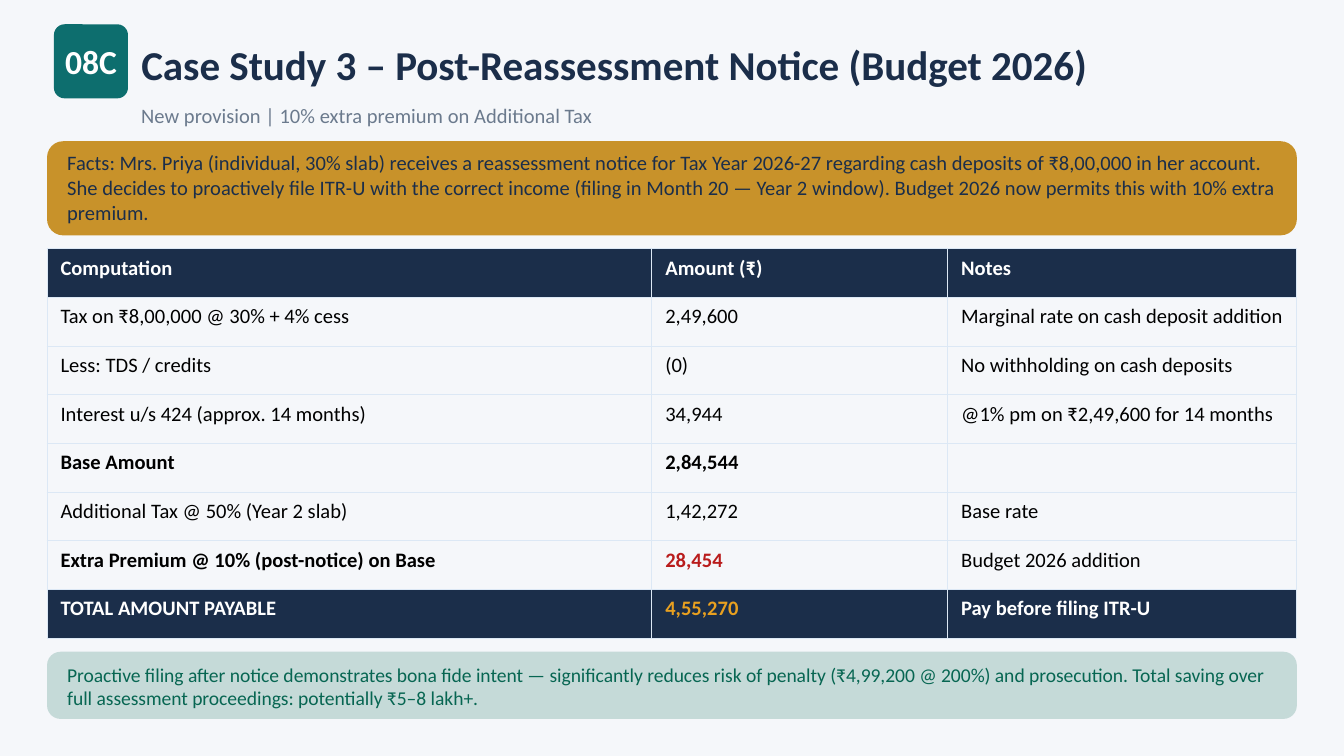
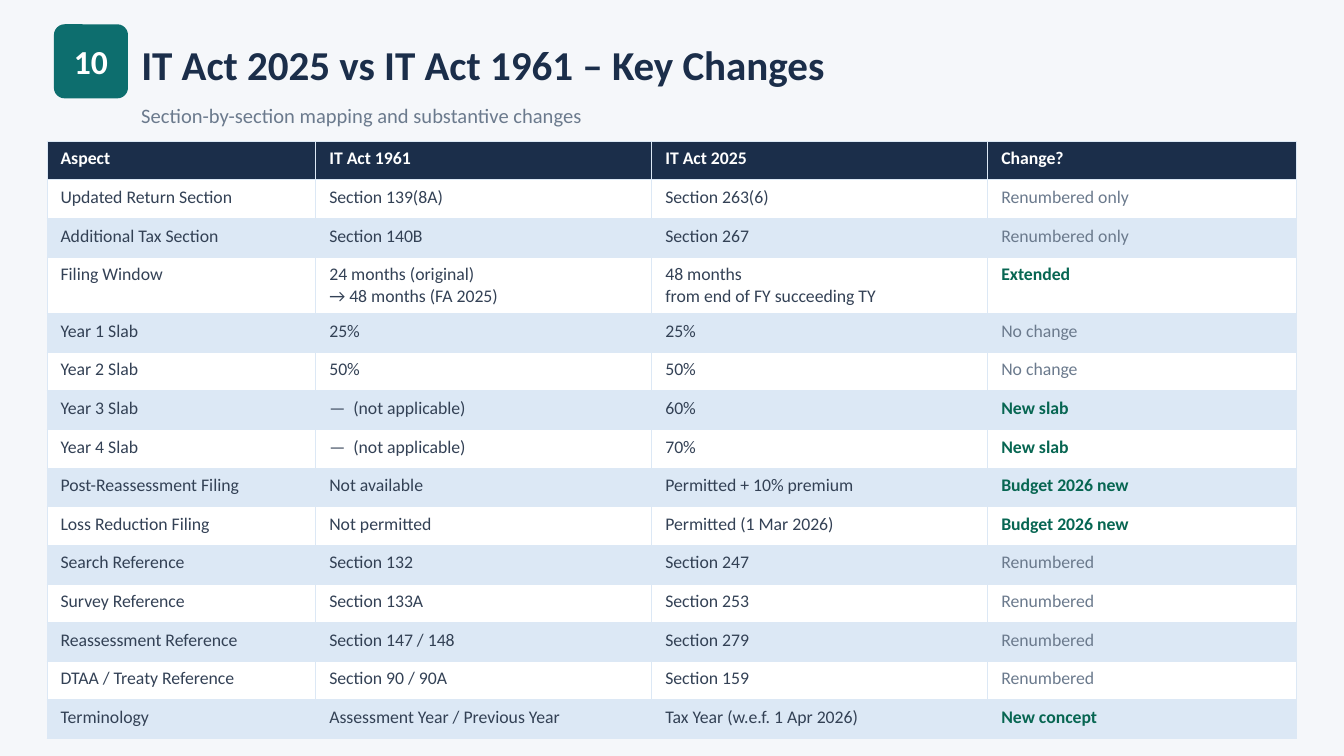
from dataclasses import dataclass

from lxml.etree import SubElement
from pptx import Presentation
from pptx.dml.color import RGBColor as RGB
from pptx.enum.shapes import MSO_SHAPE as Shape
from pptx.enum.text import MSO_ANCHOR as Anchor, MSO_AUTO_SIZE as AutoSize, PP_ALIGN as Align
from pptx.oxml.ns import qn
from pptx.util import Cm, Pt

TITLE_ONLY = 5
PLAIN_TABLE_STYLE = "{2D5ABB26-0587-4C30-8999-92F81FD0307C}"


@dataclass(frozen=True)
class Theme:
    font: str = "Calibri"
    paper: str = "F5F7FA"
    white: str = "FFFFFF"
    black: str = "000000"
    navy: str = "1B2E4A"
    teal: str = "0D6E6E"
    gold: str = "C8922A"
    amber: str = "E8A020"
    green: str = "076652"
    red: str = "B91C1C"
    slate: str = "334155"
    muted: str = "6B7A8D"
    ice: str = "DCE8F5"
    title_size: float = 22
    badge_size: float = 18
    body_size: float = 11
    note_size: float = 10.5
    small_size: float = 9.5
    border_width: float = 0.5


THEME = Theme()
LEFT, WIDTH = 0.89, 23.62
TEXT_LEFT, TEXT_WIDTH = 1.27, 23.11

# Cell styles: colour and weight
PLAIN = (THEME.black, False)
STRONG = (THEME.black, True)
ALERT = (THEME.red, True)
HEADING = (THEME.white, True)
TOTAL = (THEME.amber, True)
DETAIL = (THEME.slate, False)
UNCHANGED = (THEME.muted, False)
CHANGED = (THEME.green, True)


class SlideBuilder:
    def __init__(self, deck, theme):
        self.deck, self.theme = deck, theme
        self.page = None
        background = deck.slide_master.background.fill
        background.solid()
        background.fore_color.rgb = RGB.from_string(theme.paper)

    def new_page(self, number, title, subtitle):
        theme = self.theme
        self.page = self.deck.slides.add_slide(self.deck.slide_layouts[TITLE_ONLY])
        heading = self.page.shapes.title
        position = {"left": 2.67, "top": 0.51, "width": 21.84, "height": 1.4}
        for name, value in position.items():
            setattr(heading, name, Cm(value))
        self.fill_frame(heading.text_frame, title, theme.title_size, theme.navy, True)
        badge = self.panel(1.02, 0.46, 1.4, 1.4, theme.teal, 0.145)
        self.fill_frame(badge.text_frame, number, theme.badge_size, theme.white, True,
                        Align.CENTER)
        badge.text_frame.word_wrap = False
        self.text(2.67, 1.83, 21.84, 0.71, subtitle, theme.body_size, theme.muted)

    def fill_frame(self, frame, text, size, color, bold=False, align=Align.LEFT):
        """Fill a text frame that has no margins and is centred vertically."""
        settings = {"margin_left": 0, "margin_right": 0, "margin_top": 0,
                    "margin_bottom": 0, "word_wrap": True,
                    "auto_size": AutoSize.NONE, "vertical_anchor": Anchor.MIDDLE}
        for name, value in settings.items():
            setattr(frame, name, value)
        self.paragraphs(frame, text, size, color, bold, align)

    def paragraphs(self, frame, text, size, color, bold, align=Align.LEFT):
        for index, line in enumerate(text.split("\n")):
            para = frame.add_paragraph() if index else frame.paragraphs[0]
            para.alignment = align
            if not line:
                # Keeps an empty cell from growing to the default type size
                SubElement(para._p, qn("a:endParaRPr"), sz=str(int(size * 100)))
                continue
            span = para.add_run()
            span.text = line
            format_values = {"name": self.theme.font, "size": Pt(size), "bold": bold}
            for name, value in format_values.items():
                setattr(span.font, name, value)
            span.font.color.rgb = RGB.from_string(color)

    def text(self, left, top, width, height, text, size, color):
        box = self.page.shapes.add_textbox(Cm(left), Cm(top), Cm(width), Cm(height))
        self.fill_frame(box.text_frame, text, size, color)

    def panel(self, left, top, width, height, color, rounding, opacity=100):
        box = self.page.shapes.add_shape(
            Shape.ROUNDED_RECTANGLE, Cm(left), Cm(top), Cm(width), Cm(height))
        box.adjustments[0] = rounding
        box.shadow.inherit = False
        box.line.fill.background()
        box.fill.solid()
        box.fill.fore_color.rgb = RGB.from_string(color)
        if opacity < 100:
            tint = box._element.spPr.find(qn("a:solidFill"))[0]
            SubElement(tint, qn("a:alpha"), val=str(opacity * 1000))
        return box

    def table(self, top, columns, row_height, rows, size):
        """Draw rows given as (fill or None, [(text, style), ...])."""
        table = self.page.shapes.add_table(
            len(rows), len(columns), Cm(LEFT), Cm(top),
            Cm(sum(columns)), Cm(row_height * len(rows))).table
        table._tbl.tblPr.find(qn("a:tableStyleId")).text = PLAIN_TABLE_STYLE
        table.first_row = table.horz_banding = False
        for column, width in zip(table.columns, columns):
            column.width = Cm(width)
        for row, (fill, cells) in zip(table.rows, rows):
            row.height = Cm(row_height)
            for cell, (text, style) in zip(row.cells, cells):
                self.borders(cell)
                if fill:
                    cell.fill.solid()
                    cell.fill.fore_color.rgb = RGB.from_string(fill)
                else:
                    cell.fill.background()
                self.paragraphs(cell.text_frame, text, size, *style)

    def borders(self, cell):
        properties = cell._tc.get_or_add_tcPr()
        for side in ("lnL", "lnR", "lnT", "lnB"):
            line = SubElement(properties, qn(f"a:{side}"), w=str(Pt(self.theme.border_width)))
            fill = SubElement(line, qn("a:solidFill"))
            SubElement(fill, qn("a:srgbClr"), val=self.theme.ice)


def styled(texts, *styles):
    """Pair texts with styles; a single style serves the whole row."""
    return list(zip(texts, styles * len(texts) if len(styles) == 1 else styles))


def case_study(builder):
    theme = builder.theme
    builder.new_page("08C", "Case Study 3 – Post-Reassessment Notice (Budget 2026)",
                     "New provision | 10% extra premium on Additional Tax")
    builder.panel(LEFT, 2.67, WIDTH, 1.78, theme.gold, 0.171)
    builder.text(
        TEXT_LEFT, 2.74, TEXT_WIDTH, 1.6,
        "Facts: Mrs. Priya (individual, 30% slab) receives a reassessment notice for Tax Year "
        "2026-27 regarding cash deposits of ₹8,00,000 in her account. She decides to proactively "
        "file ITR-U with the correct income (filing in Month 20 — Year 2 window). Budget 2026 "
        "now permits this with 10% extra premium.", theme.body_size, theme.navy)
    rows = [
        (theme.navy, styled(("Computation", "Amount (₹)", "Notes"), HEADING)),
        (None, styled(("Tax on ₹8,00,000 @ 30% + 4% cess", "2,49,600",
                       "Marginal rate on cash deposit addition"), PLAIN)),
        (None, styled(("Less: TDS / credits", "(0)", "No withholding on cash deposits"), PLAIN)),
        (None, styled(("Interest u/s 424 (approx. 14 months)", "34,944",
                       "@1% pm on ₹2,49,600 for 14 months"), PLAIN)),
        (None, styled(("Base Amount", "2,84,544", ""), STRONG)),
        (None, styled(("Additional Tax @ 50% (Year 2 slab)", "1,42,272", "Base rate"), PLAIN)),
        (None, styled(("Extra Premium @ 10% (post-notice) on Base", "28,454",
                       "Budget 2026 addition"), STRONG, ALERT, PLAIN)),
        (theme.navy, styled(("TOTAL AMOUNT PAYABLE", "4,55,270", "Pay before filing ITR-U"),
                            HEADING, TOTAL, HEADING)),
    ]
    builder.table(4.7, (11.43, 5.59, 6.6), 0.92, rows, theme.body_size)
    builder.panel(LEFT, 12.32, WIDTH, 1.27, theme.green, 0.2, opacity=20)
    builder.text(
        TEXT_LEFT, 12.4, TEXT_WIDTH, 1.14,
        "Proactive filing after notice demonstrates bona fide intent — significantly reduces "
        "risk of penalty (₹4,99,200 @ 200%) and prosecution. Total saving over full assessment "
        "proceedings: potentially ₹5–8 lakh+.", theme.note_size, theme.green)


def key_changes(builder):
    theme = builder.theme
    builder.new_page("10", "IT Act 2025 vs IT Act 1961 – Key Changes",
                     "Section-by-section mapping and substantive changes")
    comparisons = [
        ("Updated Return Section", "Section 139(8A)", "Section 263(6)", "Renumbered only"),
        ("Additional Tax Section", "Section 140B", "Section 267", "Renumbered only"),
        ("Filing Window", "24 months (original)\n→ 48 months (FA 2025)",
         "48 months\nfrom end of FY succeeding TY", "Extended"),
        ("Year 1 Slab", "25%", "25%", "No change"),
        ("Year 2 Slab", "50%", "50%", "No change"),
        ("Year 3 Slab", "—  (not applicable)", "60%", "New slab"),
        ("Year 4 Slab", "—  (not applicable)", "70%", "New slab"),
        ("Post-Reassessment Filing", "Not available", "Permitted + 10% premium",
         "Budget 2026 new"),
        ("Loss Reduction Filing", "Not permitted", "Permitted (1 Mar 2026)", "Budget 2026 new"),
        ("Search Reference", "Section 132", "Section 247", "Renumbered"),
        ("Survey Reference", "Section 133A", "Section 253", "Renumbered"),
        ("Reassessment Reference", "Section 147 / 148", "Section 279", "Renumbered"),
        ("DTAA / Treaty Reference", "Section 90 / 90A", "Section 159", "Renumbered"),
        ("Terminology", "Assessment Year / Previous Year", "Tax Year (w.e.f. 1 Apr 2026)",
         "New concept"),
    ]
    rows = [(theme.navy, styled(("Aspect", "IT Act 1961", "IT Act 2025", "Change?"), HEADING))]
    for index, texts in enumerate(comparisons):
        minor = texts[-1].startswith(("Renumbered", "No change"))
        verdict = UNCHANGED if minor else CHANGED
        fill = theme.ice if index % 2 else theme.white
        rows.append((fill, styled(texts, DETAIL, DETAIL, DETAIL, verdict)))
    builder.table(2.67, (5.08, 6.35, 6.35, 5.84), 0.73, rows, theme.small_size)


def main():
    deck = Presentation()
    deck.slide_width, deck.slide_height = Cm(25.4), Cm(14.29)
    builder = SlideBuilder(deck, THEME)
    case_study(builder)
    key_changes(builder)
    deck.save("out.pptx")


if __name__ == "__main__":
    main()
